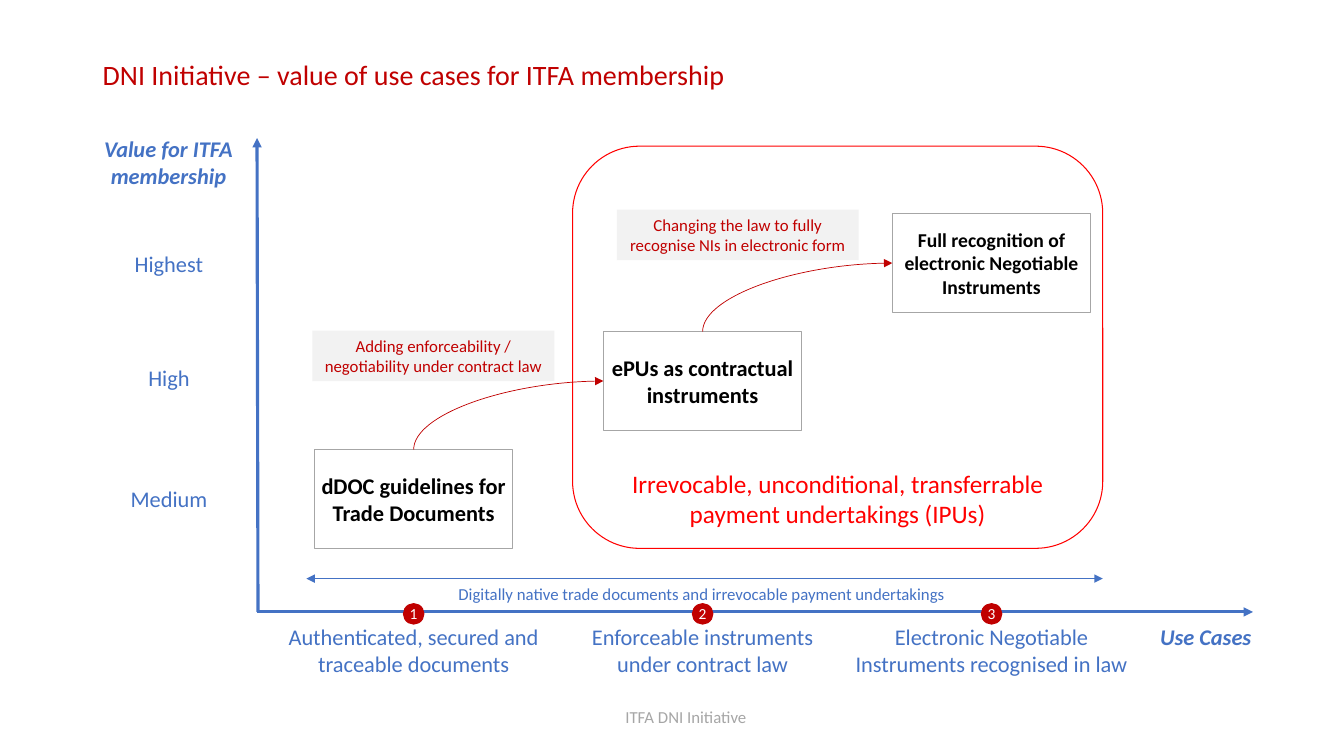
from lxml import etree
from pptx import Presentation
from pptx.dml.color import RGBColor
from pptx.enum.shapes import MSO_CONNECTOR, MSO_SHAPE
from pptx.enum.text import MSO_ANCHOR, MSO_AUTO_SIZE, PP_ALIGN
from pptx.oxml.ns import qn
from pptx.util import Pt

BLUE = RGBColor(0x44, 0x72, 0xC4)
DARK_RED = RGBColor(0xC0, 0x00, 0x00)
RED = RGBColor(0xFF, 0x00, 0x00)
GREY = RGBColor(0xA6, 0xA6, 0xA6)
PALE_GREY = RGBColor(0xF2, 0xF2, 0xF2)
WHITE = RGBColor(0xFF, 0xFF, 0xFF)
BLACK = RGBColor(0x00, 0x00, 0x00)

prs = Presentation()
prs.slide_width, prs.slide_height = Pt(960), Pt(540)
slide = prs.slides.add_slide(prs.slide_layouts[5])
shapes = slide.shapes


def add_text(text, x, y, w, h, shape=None, fill=None, line=None, line_width=0.75,
             size=16, color=BLUE, bold=False, italic=False, align=PP_ALIGN.CENTER,
             anchor=MSO_ANCHOR.TOP, inset=None, wrap=True):
    """Add a text box, or a preset shape holding the text if shape is given."""
    box = (Pt(x), Pt(y), Pt(w), Pt(h))
    if shape is None:
        sp = shapes.add_textbox(*box)
    else:
        sp = shapes.add_shape(shape, *box)
        sp.shadow.inherit = False
        if fill is None:
            sp.fill.background()
        else:
            sp.fill.solid()
            sp.fill.fore_color.rgb = fill
        if line is None:
            sp.line.fill.background()
        else:
            sp.line.color.rgb = line
            sp.line.width = Pt(line_width)
    tf = sp.text_frame
    tf.word_wrap = wrap
    tf.vertical_anchor = anchor
    if inset is not None:
        tf.margin_left = tf.margin_right = tf.margin_top = tf.margin_bottom = Pt(inset)
    p = tf.paragraphs[0]
    p.alignment = align
    r = p.add_run()
    r.text = text
    r.font.name, r.font.size = "Calibri", Pt(size)
    r.font.bold, r.font.italic = bold, italic
    r.font.color.rgb = color
    return sp


def add_arrow(x1, y1, x2, y2, color, width, kind=MSO_CONNECTOR.STRAIGHT, ends=("tailEnd",)):
    cxn = shapes.add_connector(kind, Pt(x1), Pt(y1), Pt(x2), Pt(y2))
    cxn.line.color.rgb = color
    cxn.line.width = Pt(width)
    ln = cxn.line._get_or_add_ln()
    for end in ends:
        etree.SubElement(ln, qn("a:" + end), type="triangle")
    etree.SubElement(cxn._element.spPr, qn("a:effectLst"))
    return cxn


# Title and footer
title = shapes.title
title.left, title.top, title.width, title.height = Pt(66.2), Pt(28.8), Pt(828), Pt(51.8)
tf = title.text_frame
tf.text = "DNI Initiative – value of use cases for ITFA membership"
tf.vertical_anchor = MSO_ANCHOR.MIDDLE
tf.auto_size = MSO_AUTO_SIZE.NONE
p = tf.paragraphs[0]
p.alignment = PP_ALIGN.LEFT
p.line_spacing = 0.9
p.font.name, p.font.size = "Calibri", Pt(20)
p.font.color.rgb = DARK_RED

add_text("ITFA DNI Initiative", 375.1, 497.5, 229.7, 28.8, size=12, color=GREY,
         anchor=MSO_ANCHOR.MIDDLE)

# Frame around the payment undertakings
add_text("Irrevocable, unconditional, transferrable payment undertakings (IPUs)",
         409, 104.4, 378.7, 287.3, shape=MSO_SHAPE.ROUNDED_RECTANGLE, fill=WHITE, line=RED,
         size=18, color=RED, anchor=MSO_ANCHOR.BOTTOM, inset=0)

# Axes and their names
add_arrow(183.6, 437.1, 895, 437.1, BLUE, 2.25)
add_arrow(184.3, 437.1, 183.6, 98.6, BLUE, 2.25)
add_text("Value for ITFA membership", 38.2, 90, 164.2, 51.1, bold=True, italic=True,
         anchor=MSO_ANCHOR.MIDDLE)
add_text("Use Cases", 821.5, 441.4, 109.4, 26.6, bold=True, italic=True, align=PP_ALIGN.LEFT)

for level, middle in (("Highest", 188.3), ("High", 270), ("Medium", 356.4)):
    add_text(level, 38.2, middle - 13.3, 164.9, 26.6, anchor=MSO_ANCHOR.MIDDLE)

# Use cases, rising from left to right
FIRST_CENTRE, STEP = 295.5, 206.4
BOX_W, BOX_H, BOX_TOP, RISE = 141.8, 70.6, 321.1, 84.25
use_cases = [
    ("dDOC guidelines for Trade Documents", 16,
     "Authenticated, secured and traceable documents"),
    ("ePUs as contractual instruments", 16,
     "Enforceable instruments under contract law"),
    ("Full recognition of electronic Negotiable Instruments", 14,
     "Electronic Negotiable Instruments recognised in law"),
]
boxes = []
for i, (name, size, label) in enumerate(use_cases):
    centre = FIRST_CENTRE + i * STEP
    boxes.append(add_text(name, centre - BOX_W / 2, BOX_TOP - i * RISE, BOX_W, BOX_H,
                          shape=MSO_SHAPE.RECTANGLE, line=GREY, size=size, color=BLACK,
                          bold=True, anchor=MSO_ANCHOR.MIDDLE, inset=3))
    add_text(label, centre - 105.5, 441.4, 211, 46.1)

# Curved steps between the boxes, each with its caption
captions = ["Adding enforceability / negotiability under contract law",
            "Changing the law to fully recognise NIs in electronic form"]
for i, caption in enumerate(captions):
    x1, y1 = FIRST_CENTRE + i * STEP, BOX_TOP - i * RISE
    dx, dy = STEP - BOX_W / 2, RISE - BOX_H / 2
    curve = add_arrow(x1, y1, x1 + dx, y1 - dy, DARK_RED, 0.5, kind=MSO_CONNECTOR.CURVE)
    curve.begin_connect(boxes[i], 0)
    curve.end_connect(boxes[i + 1], 1)
    # A quarter curve leaving upwards: turned by 90 degrees and flipped both ways
    spPr = curve._element.spPr
    spPr.find(qn("a:prstGeom")).set("prst", "curvedConnector2")
    for key, value in (("rot", "5400000"), ("flipH", "1"), ("flipV", "1")):
        spPr.find(qn("a:xfrm")).set(key, value)
    curve.left, curve.top = Pt(x1 + (dx - dy) / 2), Pt(y1 - (dx + dy) / 2)
    curve.width, curve.height = Pt(dy), Pt(dx)
    add_text(caption, 223.2 + i * 217.4, 236.2 - i * 86.4, 172.8, 36,
             shape=MSO_SHAPE.RECTANGLE, fill=PALE_GREY, size=12, color=DARK_RED)

# Span of the use cases
add_arrow(218.9, 413.3, 787.7, 413.3, BLUE, 0.5, ends=("headEnd", "tailEnd"))
add_text("Digitally native trade documents and irrevocable payment undertakings",
         320.4, 413.3, 362.2, 21.6, size=12, align=PP_ALIGN.LEFT, wrap=False)

# Numbered markers on the axis
DOT = 14.4
for i in range(len(use_cases)):
    add_text(str(i + 1), FIRST_CENTRE + i * STEP - DOT / 2, 431.3, DOT, DOT,
             shape=MSO_SHAPE.OVAL, fill=DARK_RED, line=DARK_RED, line_width=1,
             size=11, color=WHITE, anchor=MSO_ANCHOR.MIDDLE, inset=0)

prs.save("out.pptx")
